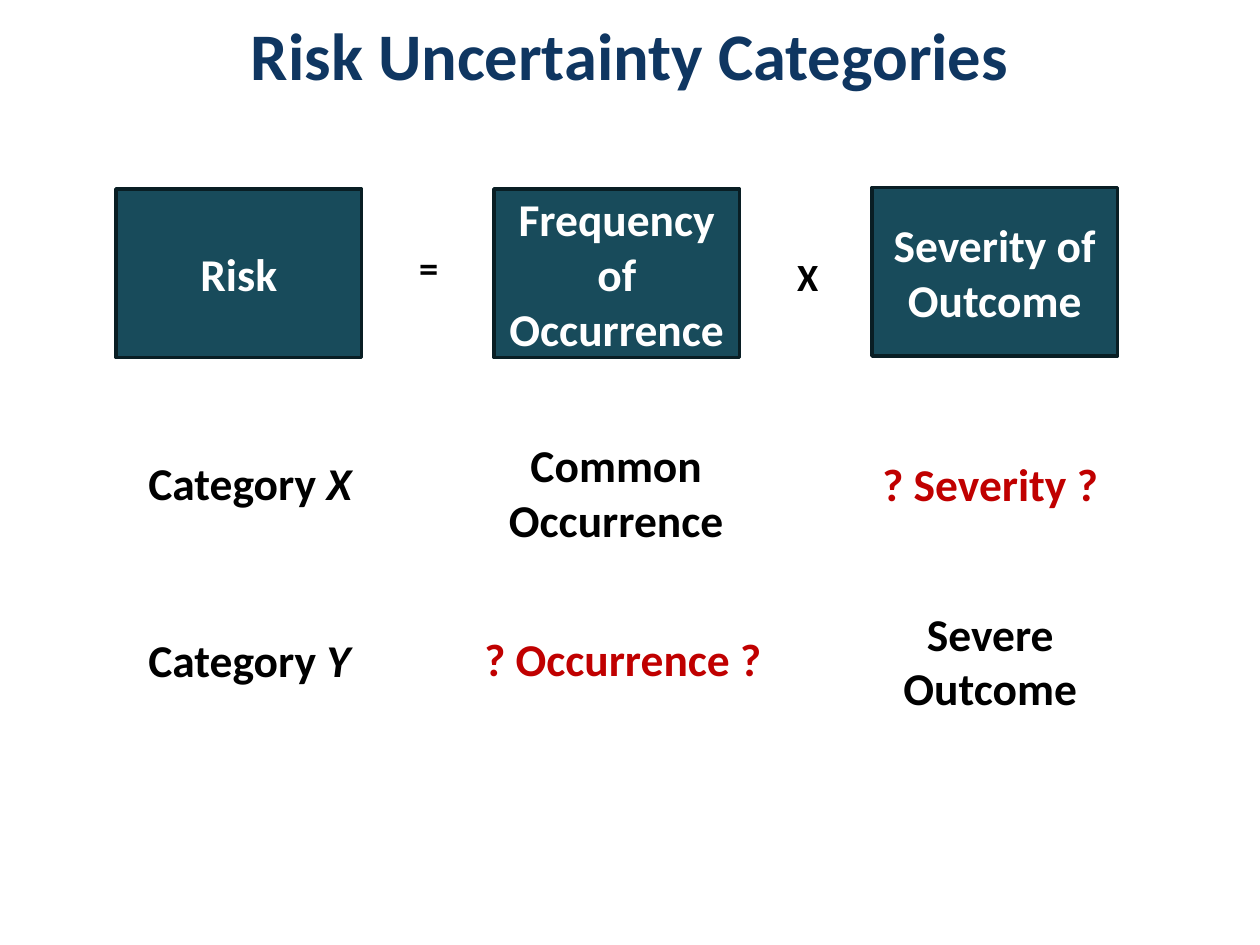
from dataclasses import dataclass

from pptx import Presentation
from pptx.dml.color import RGBColor
from pptx.enum.shapes import MSO_SHAPE
from pptx.enum.text import MSO_ANCHOR, MSO_AUTO_SIZE, PP_ALIGN
from pptx.slide import Slide
from pptx.text.text import TextFrame
from pptx.util import Cm, Pt

COLORS = {
    "title": "0F3661",
    "factor": "184B5B",
    "border": "091E24",
    "light": "FFFFFF",
    "dark": "000000",
    "unknown": "C00000",
}
FONT = "Calibri"
FACTOR_LEFT, FACTOR_STEP = 2.34, 7.62
FACTOR_WIDTH, FACTOR_HEIGHT = 4.95, 3.4


@dataclass
class Factor:
    text: str
    top: float


@dataclass
class Label:
    text: str
    left: float
    top: float
    width: float
    height: float
    color: str = "dark"
    size: int = 26
    centered: bool = True
    italic_tail: str = ""


FACTORS = [
    Factor("Risk", 3.81),
    Factor("Frequency of Occurrence", 3.81),
    Factor("Severity of Outcome", 3.78),
]

LABELS = [
    Label("X", 15.82, 4.98, 0.94, 1.19, size=22, centered=False),
    Label("=", 8.2, 4.8, 0.91, 1.19, size=22, centered=False),
    Label("Category ", 2.74, 9.04, 4.65, 1.37, centered=False, italic_tail="X"),
    Label("Common Occurrence", 9.53, 8.69, 5.79, 2.49),
    Label("? Severity ?", 17.07, 9.07, 5.79, 1.37, "unknown"),
    Label("Category ", 2.74, 12.62, 4.62, 1.37, centered=False, italic_tail="Y"),
    Label("? Occurrence ?", 9.45, 12.6, 6.22, 1.37, "unknown"),
    Label("Severe Outcome", 17.07, 12.09, 5.79, 2.49),
]


def rgb(name: str) -> RGBColor:
    return RGBColor.from_string(COLORS[name])


def format_text(frame: TextFrame, size: int, color: str, centered: bool = True) -> None:
    for paragraph in frame.paragraphs:
        paragraph.alignment = PP_ALIGN.CENTER if centered else PP_ALIGN.LEFT
        for run in paragraph.runs:
            run.font.name = FONT
            run.font.size = Pt(size)
            run.font.bold = True
            run.font.color.rgb = rgb(color)


def add_title(slide: Slide, text: str) -> None:
    title = slide.shapes.title
    title.left, title.top, title.width, title.height = Cm(0), Cm(0.28), Cm(25.4), Cm(1.63)
    frame = title.text_frame
    frame.text = text
    frame.margin_left = frame.margin_right = frame.margin_top = frame.margin_bottom = 0
    frame.vertical_anchor = MSO_ANCHOR.TOP
    frame.auto_size = MSO_AUTO_SIZE.SHAPE_TO_FIT_TEXT
    format_text(frame, 38, "title")


def add_factor(slide: Slide, factor: Factor, column: int) -> None:
    box = slide.shapes.add_shape(
        MSO_SHAPE.RECTANGLE,
        Cm(FACTOR_LEFT + column * FACTOR_STEP),
        Cm(factor.top),
        Cm(FACTOR_WIDTH),
        Cm(FACTOR_HEIGHT),
    )
    box.shadow.inherit = False
    box.fill.solid()
    box.fill.fore_color.rgb = rgb("factor")
    box.line.color.rgb = rgb("border")
    box.line.width = Pt(2)
    frame = box.text_frame
    frame.text = factor.text
    frame.word_wrap = True
    frame.vertical_anchor = MSO_ANCHOR.MIDDLE
    format_text(frame, 26, "light")


def add_label(slide: Slide, label: Label) -> None:
    box = slide.shapes.add_textbox(
        Cm(label.left), Cm(label.top), Cm(label.width), Cm(label.height)
    )
    frame = box.text_frame
    frame.text = label.text
    frame.word_wrap = label.centered
    frame.auto_size = MSO_AUTO_SIZE.SHAPE_TO_FIT_TEXT
    if label.italic_tail:
        category = frame.paragraphs[0].add_run()
        category.text = label.italic_tail
        category.font.italic = True
    format_text(frame, label.size, label.color, label.centered)


def main() -> None:
    deck = Presentation()
    deck.slide_width, deck.slide_height = Cm(25.4), Cm(19.05)
    slide = deck.slides.add_slide(deck.slide_layouts.get_by_name("Title Only"))
    add_title(slide, "Risk Uncertainty Categories")
    for column, factor in enumerate(FACTORS):
        add_factor(slide, factor, column)
    for label in LABELS:
        add_label(slide, label)
    deck.save("out.pptx")


if __name__ == "__main__":
    main()
